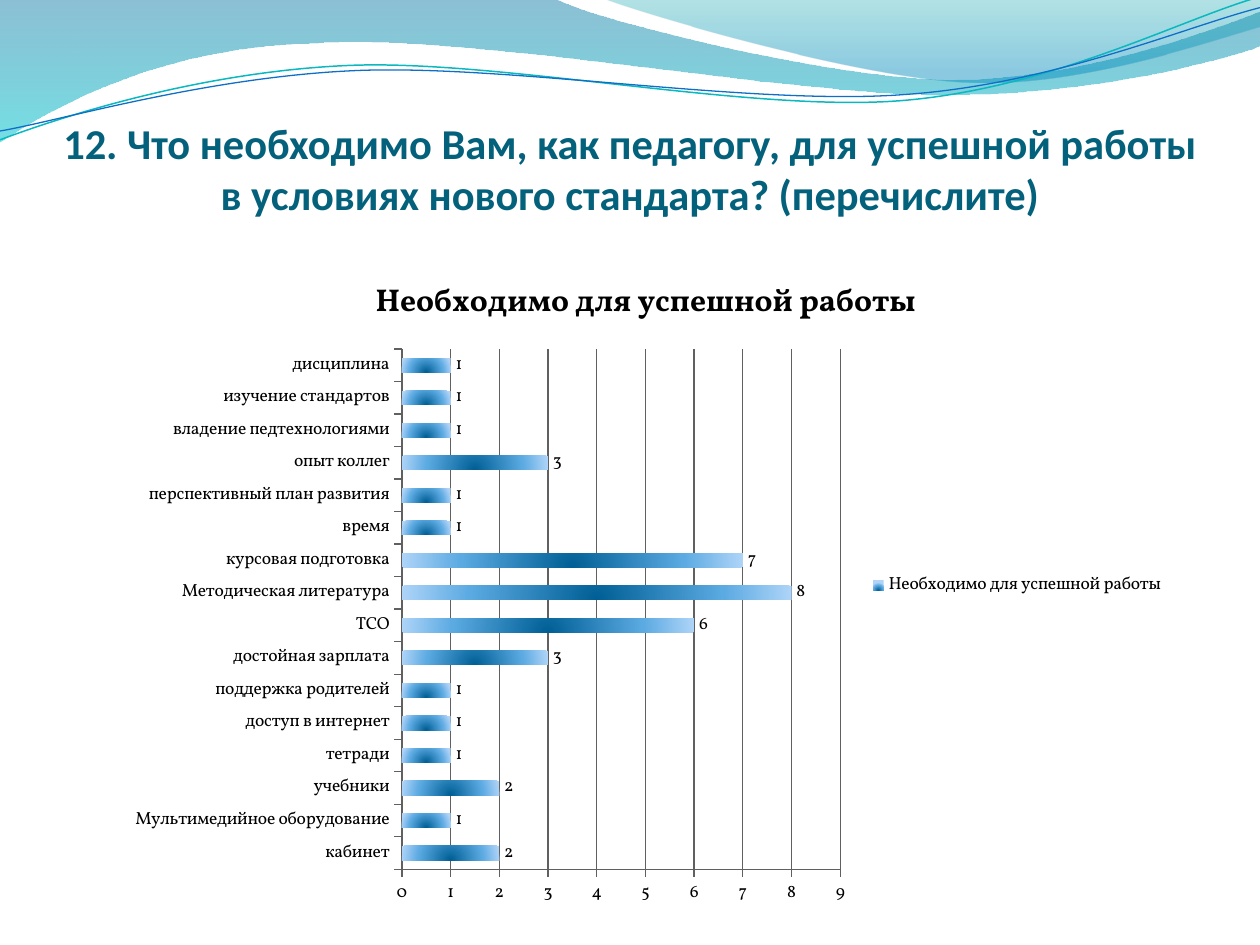
import math

from lxml import etree
from pptx import Presentation
from pptx.chart.data import CategoryChartData
from pptx.dml.color import RGBColor
from pptx.enum import chart as charts, text
from pptx.oxml import ns
from pptx.util import Inches, Pt

BLACK = RGBColor(0x00, 0x00, 0x00)
GRID = RGBColor(0x60, 0x60, 0x60)
TITLE = RGBColor(0x04, 0x61, 0x7B)
TEAL = RGBColor(0x0A, 0xB8, 0xBF)
BLUE = RGBColor(0x0F, 0x6F, 0xC6)
WAVE_TOP = RGBColor(0x00, 0x74, 0xA1)
WAVE_BOTTOM = RGBColor(0x00, 0xC6, 0xCF)
CREST_TOP = RGBColor(0x00, 0xA1, 0xA9)
CREST_BOTTOM = RGBColor(0x00, 0x8B, 0xBF)
BAR_EDGE = RGBColor(0xAE, 0xD4, 0xF8)
BAR_MIDDLE = RGBColor(0x5B, 0xAA, 0xE2)
BAR_CENTRE = RGBColor(0x00, 0x5F, 0x96)

UNITS_PER_INCH = 1000
LINE_TILT = 2.7
LINE_CENTRE = (4.99, 0.58)
SERIES_NAME = "Необходимо для успешной работы"
NEEDS = [
    ("кабинет", 2),
    ("Мультимедийное оборудование", 1),
    ("учебники", 2),
    ("тетради", 1),
    ("доступ в интернет", 1),
    ("поддержка родителей", 1),
    ("достойная зарплата", 3),
    ("ТСО", 6),
    ("Методическая литература", 8),
    ("курсовая подготовка", 7),
    ("время", 1),
    ("перспективный план развития", 1),
    ("опыт коллег", 3),
    ("владение педтехнологиями", 1),
    ("изучение стандартов", 1),
    ("дисциплина", 1),
]
WAVE = [
    [(0, 0)], [(4.4, -0.01)],
    [(4.76, 0.17), (6.64, 0.63), (7.58, 0.63)],
    [(8.53, 0.63), (9.58, 0.26), (10, 0.09)],
    [(10.01, 0.36)],
    [(9.83, 0.44), (8.7, 0.76), (7.46, 0.75)],
    [(6.22, 0.75), (3.82, 0.28), (2.57, 0.34)],
    [(1.29, 0.36), (0.46, 0.83), (-0.01, 1.13)],
]
CREST = [
    [(4.79, -0.01)],
    [(5.09, 0.11), (6.82, 0.62), (7.69, 0.65)],
    [(8.56, 0.69), (9.61, 0.32), (10, 0.21)],
    [(10, 0)],
]
TEAL_LINE = [
    [(0, 1.11)],
    [(0.48, 0.93), (1.58, 0.57), (2.77, 0.52)],
    [(3.95, 0.47), (5.93, 0.89), (7.13, 0.8)],
    [(8.33, 0.71), (9.38, 0.15), (9.98, -0.02)],
]
BLUE_LINE = [
    [(0, 1.04)],
    [(0.47, 0.96), (1.64, 0.61), (2.83, 0.56)],
    [(4.03, 0.51), (5.97, 0.84), (7.17, 0.75)],
    [(8.36, 0.67), (9.41, 0.21), (10, 0.06)],
]


def turn(point):
    """Turn a point clockwise by the line tilt."""
    angle = math.radians(LINE_TILT)
    x, y = (value - centre for value, centre in zip(point, LINE_CENTRE))
    return (LINE_CENTRE[0] + x * math.cos(angle) - y * math.sin(angle),
            LINE_CENTRE[1] + x * math.sin(angle) + y * math.cos(angle))


def set_gradient(fill, element, stops):
    """Give a fill a downward gradient of position, colour and opacity percent."""
    fill.gradient()
    fill.gradient_angle = 270
    stop_list = element.xpath(".//a:gsLst")[0]
    for stop in list(stop_list):
        stop_list.remove(stop)
    for position, color, opacity in stops:
        stop = etree.SubElement(stop_list, ns.qn("a:gs"), pos=str(position * 1000))
        color_node = etree.SubElement(stop, ns.qn("a:srgbClr"), val=str(color))
        if opacity < 100:
            etree.SubElement(color_node, ns.qn("a:alpha"), val=str(opacity * 1000))


def make_radial(element):
    """Let a gradient spread in circles from below the bottom centre."""
    linear = element.xpath(".//a:gradFill/a:lin")[0]
    circle = etree.Element(ns.qn("a:path"), path="circle")
    etree.SubElement(circle, ns.qn("a:fillToRect"),
                     l="50000", t="130000", r="50000", b="-30000")
    linear.getparent().replace(linear, circle)


def add_outline(slide, segments, closed):
    """Add a freeform whose three-point segments are cubic curves."""
    points = [tuple(round(value * UNITS_PER_INCH) for value in point)
              for segment in segments for point in segment]
    builder = slide.shapes.build_freeform(
        *points[0], scale=Inches(1) / UNITS_PER_INCH)
    builder.add_line_segments(points[1:], close=closed)
    shape = builder.convert_to_shape()
    shape.shadow.inherit = False
    lines = iter(shape._element.xpath(".//a:lnTo"))
    for segment in segments[1:]:
        steps = [next(lines) for _ in segment]
        if len(steps) == 3:
            curve = etree.Element(ns.qn("a:cubicBezTo"))
            steps[0].addprevious(curve)
            for step in steps:
                curve.append(step[0])
                step.getparent().remove(step)
    return shape


def add_band(slide, segments, stops):
    """Add a translucent wave filled from top to bottom."""
    shape = add_outline(slide, segments, True)
    shape.line.fill.background()
    set_gradient(shape.fill, shape._element.spPr, stops)


def add_curve(slide, segments, color, width):
    """Add an open curved line that is tilted."""
    turned = [[turn(point) for point in segment] for segment in segments]
    shape = add_outline(slide, turned, False)
    shape.rotation = 360 - LINE_TILT
    shape.fill.background()
    shape.line.color.rgb = color
    shape.line.width = Pt(width)


def set_font(font, size, color=BLACK, name="Vollkorn", bold=False):
    """Apply one font format."""
    font.size, font.name, font.bold = Pt(size), name, bold
    font.color.rgb = color


def add_text(slide, wording, box, bottom=0.05, **font_format):
    """Add a centred text box whose text stands on its bottom inset."""
    frame = slide.shapes.add_textbox(*map(Inches, box)).text_frame
    frame.word_wrap = True
    frame.vertical_anchor = text.MSO_ANCHOR.BOTTOM
    frame.margin_left = frame.margin_right = frame.margin_top = 0
    frame.margin_bottom = Inches(bottom)
    paragraph = frame.paragraphs[0]
    paragraph.alignment = text.PP_ALIGN.CENTER
    run = paragraph.add_run()
    run.text = wording
    set_font(run.font, **font_format)


def place_plot(chart, box, plot_box):
    """Fix the inner plot area, given in inches on the slide."""
    left, top, width, height = box
    x, y, w, h = plot_box
    plot_area = chart._chartSpace.chart.plotArea
    for layout in plot_area.findall(ns.qn("c:layout")):
        plot_area.remove(layout)
    layout = etree.Element(ns.qn("c:layout"))
    plot_area.insert(0, layout)
    manual = etree.SubElement(layout, ns.qn("c:manualLayout"))
    settings = {"layoutTarget": "inner", "xMode": "edge", "yMode": "edge",
                "x": (x - left) / width, "y": (y - top) / height,
                "w": w / width, "h": h / height}
    for name, value in settings.items():
        etree.SubElement(manual, ns.qn(f"c:{name}"), val=str(value))


def add_needs_chart(slide, box, plot_box):
    """Add the bar chart of what teachers need."""
    data = CategoryChartData()
    data.categories = [need for need, _ in NEEDS]
    data.add_series(SERIES_NAME, [count for _, count in NEEDS])
    chart = slide.shapes.add_chart(
        charts.XL_CHART_TYPE.BAR_CLUSTERED, *map(Inches, box), data).chart
    set_font(chart.font, 10)
    chart.has_title = True
    run = chart.chart_title.text_frame.paragraphs[0].add_run()
    run.text = SERIES_NAME
    set_font(run.font, 18, bold=True)
    chart.has_legend = True
    chart.legend.position = charts.XL_LEGEND_POSITION.RIGHT
    chart.legend.include_in_layout = False
    for axis in (chart.category_axis, chart.value_axis):
        axis.major_tick_mark = charts.XL_TICK_MARK.OUTSIDE
        axis.format.line.color.rgb = GRID
    values = chart.value_axis
    values.minimum_scale, values.maximum_scale, values.major_unit = 0, 9, 1
    values.has_major_gridlines = True
    values.major_gridlines.format.line.color.rgb = GRID
    plot = chart.plots[0]
    plot.gap_width = 130
    plot.vary_by_categories = False
    plot.has_data_labels = True
    plot.data_labels.show_value = True
    plot.data_labels.position = charts.XL_LABEL_POSITION.OUTSIDE_END
    series = plot.series[0]
    stops = [(0, BAR_CENTRE, 100), (65, BAR_MIDDLE, 100), (100, BAR_EDGE, 100)]
    set_gradient(series.format.fill, series._element, stops)
    make_radial(series._element)
    place_plot(chart, box, plot_box)


def main():
    """Build and save the slide."""
    presentation = Presentation()
    presentation.slide_width, presentation.slide_height = Inches(10), Inches(7.5)
    slide = presentation.slides.add_slide(presentation.slide_layouts[6])
    add_band(slide, WAVE, [(0, WAVE_TOP, 45), (100, WAVE_BOTTOM, 55)])
    add_band(slide, CREST, [(0, CREST_TOP, 30), (80, CREST_BOTTOM, 45)])
    add_curve(slide, TEAL_LINE, TEAL, 0.85)
    add_curve(slide, BLUE_LINE, BLUE, 0.75)
    question = ("12. Что необходимо Вам, как педагогу, для успешной работы "
                "в условиях нового стандарта? (перечислите)")
    add_text(slide, question, (0.5, 0.77, 9, 1.72), bottom=0.75,
             size=24.3, color=TITLE, name="Calibri", bold=True)
    add_needs_chart(slide, (0.91, 2, 8.43, 5.29), (3.19, 2.77, 3.48, 4.13))
    presentation.save("out.pptx")


if __name__ == "__main__":
    main()
